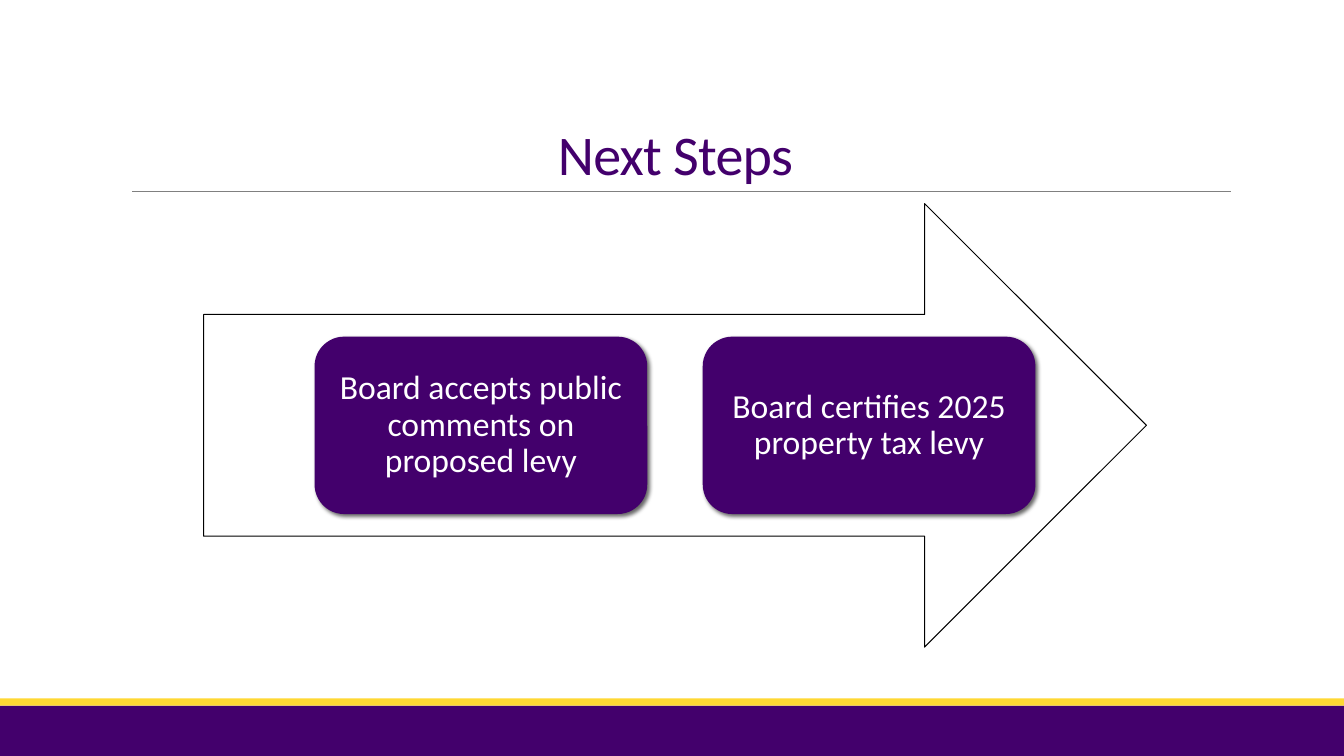
from pptx import Presentation
from pptx.dml.color import RGBColor
from pptx.enum.shapes import MSO_CONNECTOR, MSO_SHAPE
from pptx.enum.text import MSO_ANCHOR as Anchor, PP_ALIGN as Align
from pptx.oxml import parse_xml
from pptx.oxml.ns import nsdecls, qn
from pptx.util import Inches, Pt

PURPLE = "43006C"
YELLOW = "FFD833"
GRAY = "808080"
BLACK = "000000"
WHITE = "FFFFFF"

STEPS = [
    "Board accepts public comments on proposed levy",
    "Board certifies 2025 property tax levy",
]
STEP_LEFT, STEP_TOP = 3.12, 3.34
STEP_WIDTH, STEP_HEIGHT, STEP_GAP = 3.3, 1.76, 0.55


def color(value):
    return RGBColor.from_string(value)


def add_shape(slide, kind, left, top, width, height, fill=None, line=None):
    shape = slide.shapes.add_shape(
        kind, Inches(left), Inches(top), Inches(width), Inches(height))
    shape.shadow.inherit = False
    if fill:
        shape.fill.solid()
        shape.fill.fore_color.rgb = color(fill)
    else:
        shape.fill.background()
    if line:
        shape.line.color.rgb = color(line)
        shape.line.width = Pt(0.75)
    else:
        shape.line.fill.background()
    return shape


def add_shadow(shape):
    effects = shape._element.spPr.find(qn("a:effectLst"))
    effects.append(parse_xml(
        f'<a:outerShdw {nsdecls("a")} blurRad="{Pt(3)}" dist="{Pt(2)}" '
        f'dir="2700000" algn="tl" rotWithShape="0"><a:srgbClr val="{BLACK}">'
        '<a:alpha val="60000"/></a:srgbClr></a:outerShdw>'))


def add_rule(slide, left, right, top):
    rule = slide.shapes.add_connector(
        MSO_CONNECTOR.STRAIGHT, Inches(left), Inches(top), Inches(right), Inches(top))
    rule.line.color.rgb = color(GRAY)
    rule.line.width = Pt(0.5)
    rule._element.spPr.append(parse_xml(f'<a:effectLst {nsdecls("a")}/>'))


def write_text(shape, text, size, text_color, anchor=Anchor.MIDDLE,
               line_spacing=0.9, vertical_inset=0.1, character_spacing=None):
    frame = shape.text_frame
    frame.word_wrap = True
    frame.vertical_anchor = anchor
    frame.margin_left = frame.margin_right = Inches(0.1)
    frame.margin_top = frame.margin_bottom = Inches(vertical_inset)
    paragraph = frame.paragraphs[0]
    paragraph.alignment = Align.CENTER
    paragraph.line_spacing = line_spacing
    run = paragraph.add_run()
    run.text = text
    run.font.name = "Calibri"
    run.font.size = Pt(size)
    run.font.color.rgb = color(text_color)
    if character_spacing is not None:
        run.font._element.set("spc", str(round(character_spacing * 100)))


def add_title(slide, text):
    title = slide.shapes.add_textbox(Inches(1.2), Inches(0.31), Inches(11), Inches(1.59))
    write_text(title, text, 40, PURPLE, anchor=Anchor.BOTTOM, line_spacing=0.85,
               vertical_inset=0.05, character_spacing=-0.5)


def add_step(slide, index, text):
    left = STEP_LEFT + index * (STEP_WIDTH + STEP_GAP)
    step = add_shape(slide, MSO_SHAPE.ROUNDED_RECTANGLE, left, STEP_TOP,
                     STEP_WIDTH, STEP_HEIGHT, fill=PURPLE)
    add_shadow(step)
    write_text(step, text, 24, WHITE)


def main():
    presentation = Presentation()
    presentation.slide_width = Inches(13.33)
    presentation.slide_height = Inches(7.5)
    slide = presentation.slides.add_slide(presentation.slide_layouts[6])

    # Footer bands
    add_shape(slide, MSO_SHAPE.RECTANGLE, 0, 7, 13.33, 0.5, fill=PURPLE)
    add_shape(slide, MSO_SHAPE.RECTANGLE, 0, 6.93, 13.33, 0.07, fill=YELLOW)

    # Title and rule
    add_rule(slide, 1.31, 12.21, 1.9)
    add_title(slide, "Next Steps")

    # Process arrow with its steps
    add_shape(slide, MSO_SHAPE.RIGHT_ARROW, 2.02, 2.02, 9.35, 4.4, line=BLACK)
    for index, text in enumerate(STEPS):
        add_step(slide, index, text)

    presentation.save("out.pptx")


if __name__ == "__main__":
    main()
